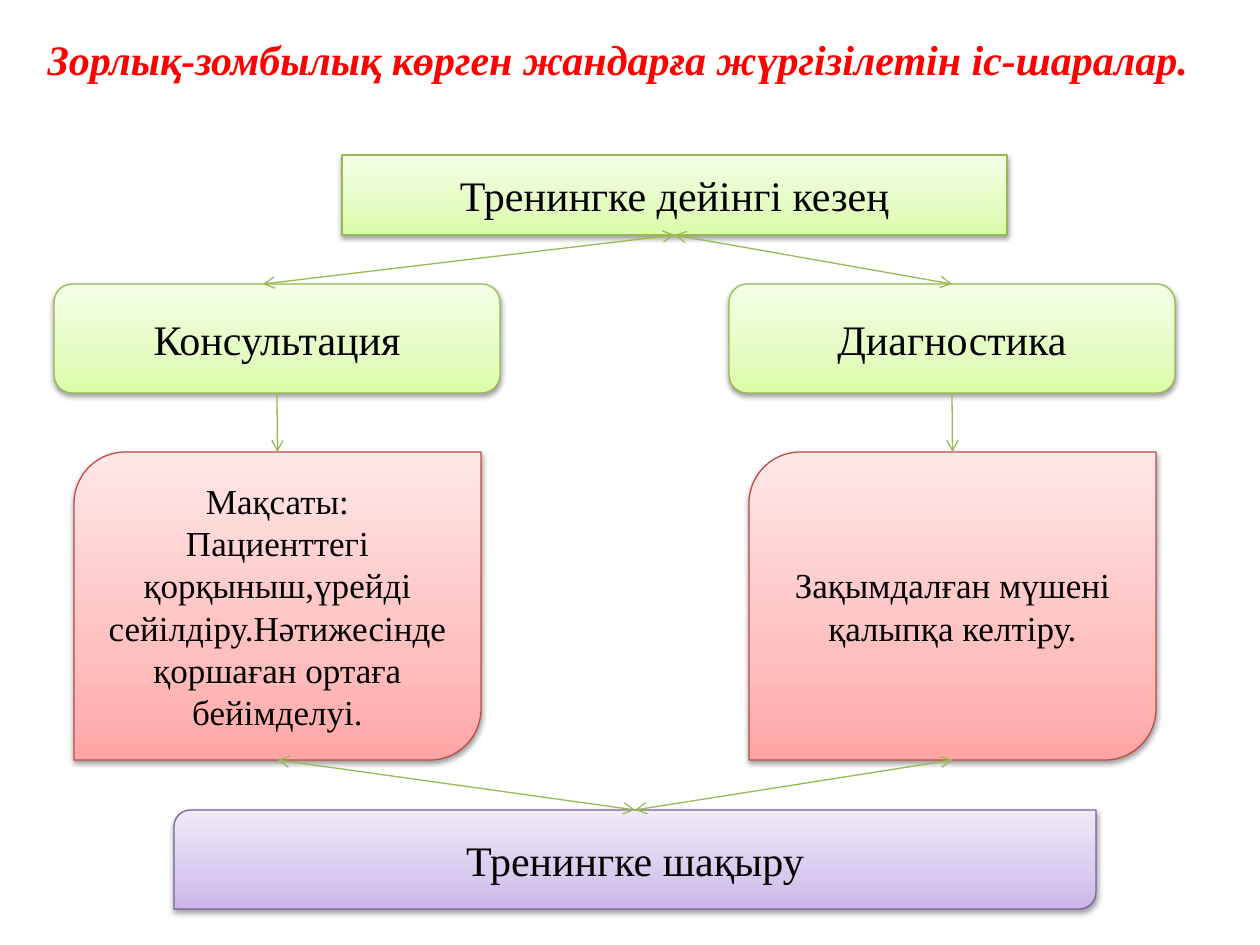
from lxml.etree import SubElement
from copy import deepcopy
from pptx import Presentation
from pptx.dml.color import RGBColor
from pptx.enum.shapes import MSO_CONNECTOR, MSO_SHAPE
from pptx.enum.text import MSO_ANCHOR, PP_ALIGN
from pptx.oxml.ns import qn
from pptx.util import Pt

SCALE = 914400 / 126
TOP, BOTTOM = 0, 2
GREEN = ("98B955", "DAFDA7", "E4FCC2", "F5FFE7")
RED = ("BF4C48", "FFA6A5", "FFC0BF", "FFE7E7")
PURPLE = ("7D60A0", "C9B5E8", "D8CBEE", "F0EAF9")


def px(n):
    return round(n * SCALE)


def rgb(color):
    return RGBColor.from_string(color)


class Deck:
    """Holds the style and the current slide and draws its elements."""

    font = "Times New Roman"

    def __init__(self):
        self.prs = Presentation()
        self.prs.slide_width, self.prs.slide_height = px(1260), px(945)
        self.s = self.prs.slides.add_slide(self.prs.slide_layouts[5])

    def text(self, tf, lines, align, color, **fmt):
        for i, line in enumerate(lines):
            p = tf.add_paragraph() if i else tf.paragraphs[0]
            p.alignment = align
            r = p.add_run()
            r.text = line
            r.font.color.rgb = rgb(color)
            for name, value in {"name": self.font, **fmt}.items():
                setattr(r.font, name, value)

    def title(self, text, x, y, w, h):
        sp = self.s.shapes.title
        sp.left, sp.top, sp.width, sp.height = map(px, (x, y, w, h))
        tf = sp.text_frame
        tf.word_wrap = False
        tf.vertical_anchor = MSO_ANCHOR.TOP
        self.text(tf, [text], PP_ALIGN.LEFT, "FF0000", size=Pt(24), bold=True, italic=True)

    def box(self, kind, lines, x, y, w, h, palette, size=24):
        sp = self.s.shapes.add_shape(kind, *map(px, (x, y, w, h)))
        edge, *shades = palette
        sp.fill.gradient()
        sp.fill.gradient_angle = 90
        stops = sp._element.spPr.find(".//" + qn("a:gsLst"))
        stops.insert(1, deepcopy(stops[0]))
        for stop, pos, shade in zip(sp.fill.gradient_stops, (0, 0.35, 1), shades):
            stop.position = pos
            stop.color.rgb = rgb(shade)
        sp.line.color.rgb = rgb(edge)
        sp.line.width = Pt(0.75)
        self.shade(sp)
        tf = sp.text_frame
        tf.word_wrap = True
        tf.vertical_anchor = MSO_ANCHOR.MIDDLE
        self.text(tf, lines, PP_ALIGN.CENTER, "000000", size=Pt(size))
        return sp

    def shade(self, sp):
        sp.shadow.inherit = False
        effects = sp._element.spPr.find(qn("a:effectLst"))
        shadow = SubElement(effects, qn("a:outerShdw"), blurRad="40000", dist="20000",
                            dir="5400000", rotWithShape="0")
        color = SubElement(shadow, qn("a:srgbClr"), val="000000")
        SubElement(color, qn("a:alpha"), val="38000")

    def arrow(self, start, end, both=True):
        points = [self.middle(*start), self.middle(*end)]
        cx = self.s.shapes.add_connector(MSO_CONNECTOR.STRAIGHT, *points[0], *points[1])
        for connect, (sp, side, *shift) in ((cx.begin_connect, start), (cx.end_connect, end)):
            if not shift and sp.auto_shape_type != MSO_SHAPE.ROUND_2_DIAG_RECTANGLE:
                connect(sp, side)
        cx.line.color.rgb = rgb(GREEN[0])
        cx.line.width = Pt(0.75)
        ln = cx.line._get_or_add_ln()
        for tag in ("a:headEnd", "a:tailEnd") if both else ("a:tailEnd",):
            SubElement(ln, qn(tag), type="arrow")
        SubElement(cx._element.spPr, qn("a:effectLst"))

    def middle(self, sp, side, shift=0):
        x = sp.left + sp.width // 2 + px(shift)
        return x, sp.top + (sp.height if side == BOTTOM else 0)


def main():
    d = Deck()
    d.title("Зорлық-зомбылық көрген жандарға жүргізілетін іс-шаралар.", 35, 27, 1167, 63)
    stage = d.box(MSO_SHAPE.RECTANGLE, ["Тренингке дейінгі кезең"], 342, 155, 665, 80, GREEN)
    branches = (
        ("Консультация", 277, -14,
         ["Мақсаты:", "Пациенттегі қорқыныш,үрейді сейілдіру.Нәтижесінде қоршаған ортаға бейімделуі."]),
        ("Диагностика", 952, 0, ["Зақымдалған мүшені қалыпқа келтіру."]),
    )
    invite = d.box(MSO_SHAPE.ROUND_2_DIAG_RECTANGLE, ["Тренингке шақыру"],
                   174, 810, 922, 99, PURPLE)
    for name, center, shift, goal in branches:
        step = d.box(MSO_SHAPE.ROUNDED_RECTANGLE, [name], center - 223, 284, 446, 109, GREEN)
        aim = d.box(MSO_SHAPE.ROUND_2_DIAG_RECTANGLE, goal, center - 203, 452, 407, 308, RED, 20)
        d.arrow((stage, BOTTOM), (step, TOP, shift) if shift else (step, TOP))
        d.arrow((step, BOTTOM), (aim, TOP), both=False)
        d.arrow((aim, BOTTOM), (invite, TOP))
    d.prs.save("out.pptx")


if __name__ == "__main__":
    main()
